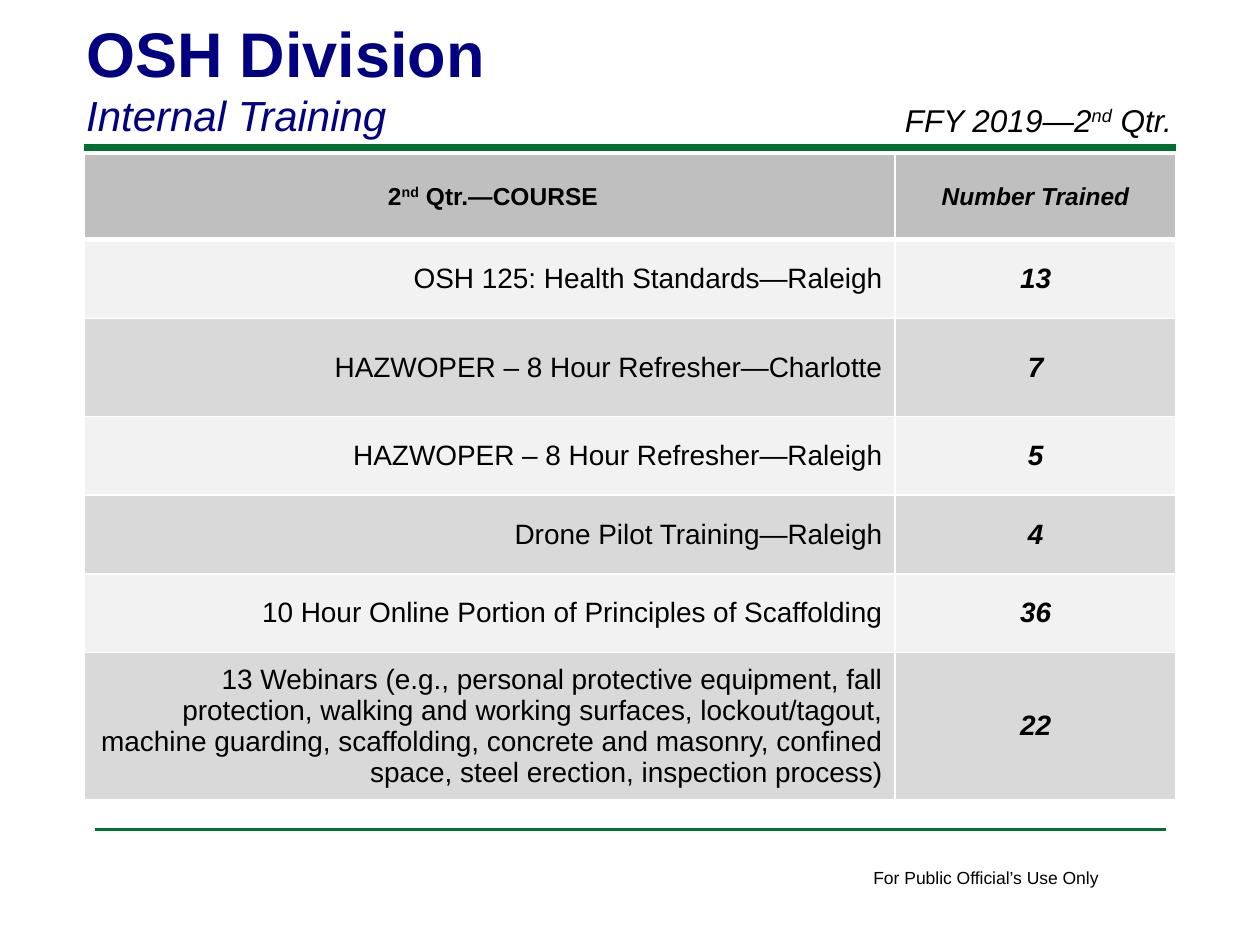
from dataclasses import dataclass

from lxml import etree
from pptx import Presentation
from pptx import util as u
from pptx.dml.color import RGBColor
from pptx.enum import shapes, text
from pptx.oxml import ns

GREEN, NAVY, BLACK, WHITE = "007030", "000080", "000000", "FFFFFF"
HEAD, PALE, GREY = "BFBFBF", "F2F2F2", "D9D9D9"
LEFT, CENTER, RIGHT = text.PP_ALIGN.LEFT, text.PP_ALIGN.CENTER, text.PP_ALIGN.RIGHT


@dataclass
class Course:
    name: str
    count: str
    height: float = 45


@dataclass
class Rule:
    left: float
    right: float
    top: float
    width: float


COURSES = [
    Course("OSH 125: Health Standards—Raleigh", "13"),
    Course("HAZWOPER – 8 Hour Refresher—Charlotte", "7", 56),
    Course("HAZWOPER – 8 Hour Refresher—Raleigh", "5"),
    Course("Drone Pilot Training—Raleigh", "4"),
    Course("10 Hour Online Portion of Principles of Scaffolding", "36"),
    Course("13 Webinars (e.g., personal protective equipment, fall protection, "
           "walking and working surfaces, lockout/tagout, machine guarding, "
           "scaffolding, concrete and masonry, confined space, steel erection, "
           "inspection process)", "22", 75),
]
RULES = [Rule(48, 672, 84.25, 4), Rule(54, 666, 474, 2)]


def color(code: str) -> RGBColor:
    return RGBColor.from_string(code)


def write(para, words: str, size: float, ink: str = BLACK, bold: bool = False,
          italic: bool = False, align=LEFT) -> None:
    """Fill a paragraph; words between carets are raised."""
    para.alignment = align
    for i, part in enumerate(words.split("^")):
        run = para.add_run()
        run.text = part
        font = run.font
        font.name, font.size = "Arial", u.Pt(size)
        font.bold, font.italic = bold, italic
        font.color.rgb = color(ink)
        if i % 2:
            run._r.get_or_add_rPr().set("baseline", "30000")


def draw_rule(slide, rule: Rule) -> None:
    line = slide.shapes.add_connector(
        shapes.MSO_CONNECTOR.STRAIGHT, u.Pt(rule.left), u.Pt(rule.top),
        u.Pt(rule.right), u.Pt(rule.top))
    line.line.color.rgb = color(GREEN)
    line.line.width = u.Pt(rule.width)
    etree.SubElement(line._element.spPr, ns.qn("a:effectLst"))


def add_label(slide, left: float, top: float, width: float, height: float,
              words: str, wrap: bool = True, **style) -> None:
    box = slide.shapes.add_textbox(u.Pt(left), u.Pt(top), u.Pt(width), u.Pt(height))
    box.text_frame.word_wrap = wrap
    write(box.text_frame.paragraphs[0], words, **style)


def add_title(slide) -> None:
    title = slide.shapes.title
    title.left, title.top = u.Pt(42), u.Pt(4.5)
    title.width, title.height = u.Pt(594), u.Pt(80)
    frame = title.text_frame
    frame.word_wrap = True
    frame.auto_size = text.MSO_AUTO_SIZE.NONE
    frame.vertical_anchor = text.MSO_ANCHOR.TOP
    write(frame.paragraphs[0], "OSH Division", 36, NAVY, bold=True)
    write(frame.add_paragraph(), "Internal Training", 24, NAVY, italic=True)
    for para in frame.paragraphs:
        para.space_before = u.Pt(0)


def style_cell(cell, fill: str, base: float = 1) -> None:
    """Set white borders, then the fill; base is the lower border's width."""
    props = cell._tc.get_or_add_tcPr()
    for side, width in zip("LRTB", (1, 1, 1, base)):
        edge = etree.SubElement(props, ns.qn("a:ln" + side), w=str(u.Pt(width)))
        solid = etree.SubElement(edge, ns.qn("a:solidFill"))
        etree.SubElement(solid, ns.qn("a:srgbClr"), val=WHITE)
    cell.fill.solid()
    cell.fill.fore_color.rgb = color(fill)
    cell.vertical_anchor = text.MSO_ANCHOR.MIDDLE


def add_courses(slide) -> None:
    heights = [49] + [course.height for course in COURSES]
    table = slide.shapes.add_table(len(heights), 2, u.Pt(48), u.Pt(88), u.Pt(624),
                                   u.Pt(sum(heights))).table
    table.first_row = table.horz_banding = False
    for col, width in zip(table.columns, (463.5, 160.5)):
        col.width = u.Pt(width)
    for row, height in zip(table.rows, heights):
        row.height = u.Pt(height)

    for i, head in enumerate((" 2^nd^ Qtr.—COURSE", "Number Trained")):
        cell = table.cell(0, i)
        style_cell(cell, HEAD, base=3)
        write(cell.text_frame.paragraphs[0], head, 14, bold=True,
              italic=i == 1, align=CENTER)
    for i, course in enumerate(COURSES, 1):
        name, count = table.cell(i, 0), table.cell(i, 1)
        for cell in (name, count):
            style_cell(cell, PALE if i % 2 else GREY)
        write(name.text_frame.paragraphs[0], course.name, 16, align=RIGHT)
        write(count.text_frame.paragraphs[0], course.count, 16, bold=True,
              italic=True, align=CENTER)


def main() -> None:
    deck = Presentation()
    deck.slide_width, deck.slide_height = u.Pt(720), u.Pt(540)
    slide = deck.slides.add_slide(deck.slide_layouts[5])
    for rule in RULES:
        draw_rule(slide, rule)
    add_label(slide, 492, 492, 144.5, 19.5, "For Public Official’s Use Only",
              wrap=False, size=10)
    add_courses(slide)
    add_title(slide)
    add_label(slide, 510, 54, 180, 29, "FFY 2019—2^nd^ Qtr.", size=18, italic=True)
    deck.save("out.pptx")


if __name__ == "__main__":
    main()
